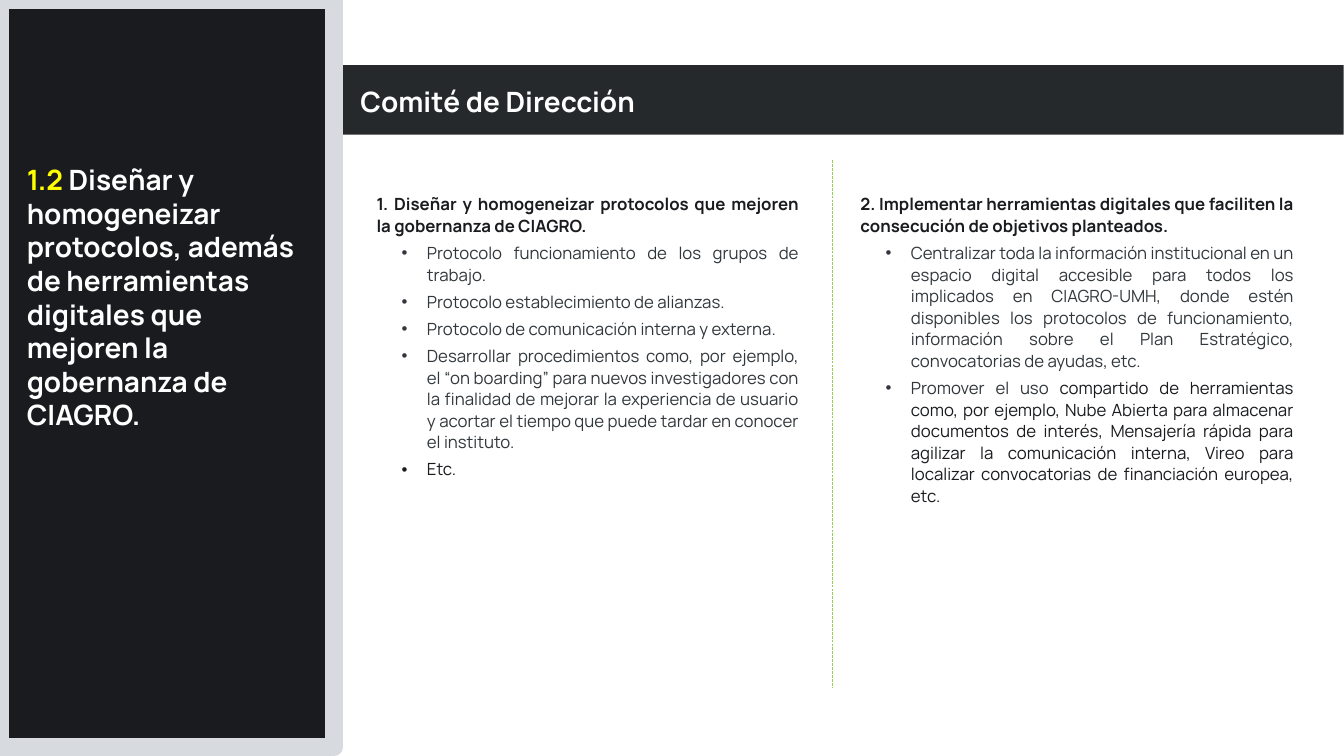
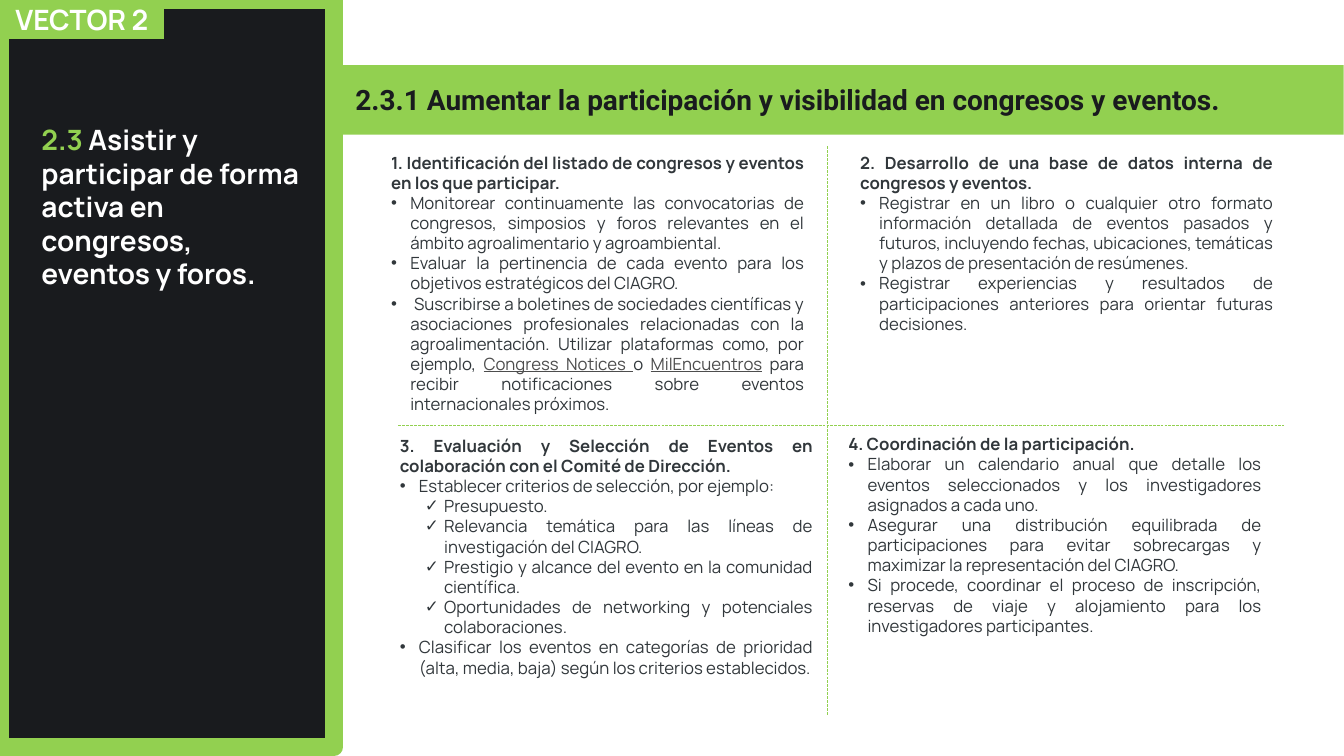
from lxml.etree import SubElement as Sub
from pptx import Presentation
from pptx.dml.color import RGBColor
from pptx.enum.dml import MSO_LINE_DASH_STYLE as Dash
from pptx.enum.shapes import MSO_CONNECTOR as Conn, MSO_SHAPE as Shape
from pptx.enum.text import MSO_ANCHOR as Anchor, MSO_AUTO_SIZE as Auto, PP_ALIGN as Align
from pptx.oxml.ns import qn
from pptx.util import Inches, Pt

WIDE, HIGH = 26.66, 15
INK, BAND, GREY, TEXT = "191B1E", "25292C", "D7DADF", "31373B"
GREEN, YELLOW, WHITE, LINK = "92D050", "FFFF00", "FFFFFF", "4D4D4D"
SIDE = 24.91  # right edge of the side panel, in columns

BIG = dict(name="Manrope", size=Pt(40), bold=True)
HEAD = dict(name="Manrope", size=Pt(24), bold=True)
BODY = {**HEAD, "bold": False}

# List styles: per depth, the level, left margin, hang (inches) and bullet
LOOSE = dict(
    gaps=dict(line_spacing=1.07, space_before=Pt(0), space_after=Pt(8)),
    head=INK,
    steps=[(0, 0, 0, None), (1, 1, 0.5, "•")],
)
TIGHT = dict(
    gaps=dict(line_spacing=1.0, space_before=Pt(0), space_after=Pt(0)),
    head=TEXT,
    steps=[(0, 0, 0, None), (0, 0.38, 0.38, "•"), (1, 0.88, 0.38, "✓")],
)


def tint(code):
    return RGBColor.from_string(code)


def put(obj, vals):
    for key, val in vals.items():
        setattr(obj, key, val)


class Deck:
    """Style and current slide; places are on a grid of 100 columns by 100 rows."""

    def __init__(self):
        self.prs = Presentation()
        put(self.prs, dict(slide_width=Inches(WIDE), slide_height=Inches(HIGH)))
        self.slide = None

    def grid(self, x, y):
        return Inches(x * WIDE / 100), Inches(y * HIGH / 100)

    def box(self, x, y, w, h):
        return *self.grid(x, y), *self.grid(w, h)

    def new(self, kind):
        self.slide = self.prs.slides.add_slide(self.prs.slide_layouts[kind])
        self.rect((0, 0, SIDE, 100), INK)

    def rect(self, area, fill=None, edge=None):
        item = self.slide.shapes.add_shape(Shape.RECTANGLE, *self.box(*area))
        item.shadow.inherit = False
        if fill:
            item.fill.solid()
            item.fill.fore_color.rgb = tint(fill)
        else:
            item.fill.background()
        if edge:
            item.line.color.rgb = tint(edge)
            item.line.width = Pt(25.25)
        else:
            item.line.fill.background()
        return item

    def frame(self, edge):
        self.rect((0.04, 0, 24.83, 98.8), edge=edge)

    def line(self, start, end):
        item = self.slide.shapes.add_connector(
            Conn.STRAIGHT, *self.grid(*start), *self.grid(*end))
        item.line.color.rgb = tint(GREEN)
        put(item.line, dict(width=Pt(0.5), dash_style=Dash.LONG_DASH))
        Sub(item._element.spPr, qn("a:effectLst"))

    def run(self, par, text, color, form, under=False):
        run = par.add_run()
        run.text = text
        put(run.font, {**form, "underline": under})
        run.font.color.rgb = tint(color)

    def place(self, idx, area):
        """Move a placeholder to its area, in front of what is drawn so far."""
        item = next(p for p in self.slide.placeholders
                    if p.placeholder_format.idx == idx)
        put(item, dict(zip(("left", "top", "width", "height"), self.box(*area))))
        item._element.getparent().append(item._element)
        return item.text_frame

    def title(self, text, area, band, color, font="Manrope"):
        self.rect((SIDE, 8.6, 75.06, 9.2), band)
        frame = self.place(0, area)
        put(frame, dict(word_wrap=True, auto_size=Auto.NONE,
                        vertical_anchor=Anchor.MIDDLE))
        par = frame.paragraphs[0]
        par.alignment = Align.LEFT
        self.run(par, text, color, {**BIG, "name": font})

    def aim(self, num, text, color, area):
        frame = self.slide.shapes.add_textbox(*self.box(*area)).text_frame
        put(frame, dict(word_wrap=True, margin_left=Inches(0.24),
                        margin_right=Inches(0.24)))
        par = frame.paragraphs[0]
        self.run(par, num, color, BIG)
        self.run(par, text, WHITE, BIG)

    def tag(self, text, area):
        frame = self.rect(area, GREEN).text_frame
        frame.vertical_anchor = Anchor.MIDDLE
        par = frame.paragraphs[0]
        par.alignment = Align.CENTER
        self.run(par, text, WHITE, BIG)

    def list(self, idx, area, style, rows):
        frame = self.place(idx, area)
        put(frame, dict(word_wrap=True, auto_size=Auto.NONE,
                        vertical_anchor=Anchor.TOP))
        for i, (depth, *runs) in enumerate(rows):
            par = frame.paragraphs[0] if i == 0 else frame.add_paragraph()
            level, left, hang, mark = style["steps"][depth]
            put(par, dict(style["gaps"], alignment=Align.JUSTIFY, level=level))
            prop = par._p.get_or_add_pPr()
            prop.set("marL", str(Inches(left)))
            prop.set("indent", str(-Inches(hang)))
            if mark:
                Sub(prop, qn("a:buFont"), typeface="Arial")
                Sub(prop, qn("a:buChar"), char=mark)
            else:
                Sub(prop, qn("a:buNone"))
            base, form = (TEXT, BODY) if depth else (style["head"], HEAD)
            for run in runs:
                text, color = run if isinstance(run, tuple) else (run, base)
                self.run(par, text, color, form, color == LINK)


def board(deck):
    deck.new(3)
    deck.title("Comité de Dirección", (26.44, 10.87, 70.03, 5.13), BAND, WHITE)
    deck.frame(GREY)
    deck.aim("1.2 ", "Diseñar y homogeneizar protocolos, además de herramientas "
             "digitales que mejoren la gobernanza de CIAGRO.",
             YELLOW, (1.09, 21.2, 22.77, 36.6))
    deck.list(1, (27.64, 25.13, 32.15, 38.8), LOOSE, [
        (0, "1. Diseñar y homogeneizar protocolos que mejoren la gobernanza "
            "de CIAGRO."),
        (1, "Protocolo funcionamiento de los grupos de trabajo."),
        (1, "Protocolo establecimiento de alianzas."),
        (1, "Protocolo de comunicación interna y externa."),
        (1, "Desarrollar procedimientos como, por ejemplo, el “on boarding” para "
            "nuevos investigadores con la finalidad de mejorar la experiencia de "
            "usuario y acortar el tiempo que puede tardar en conocer el instituto."),
        (1, ("Etc.", INK)),
    ])
    deck.list(2, (63.65, 25.13, 32.97, 39.4), LOOSE, [
        (0, "2. Implementar herramientas digitales que faciliten la consecución "
            "de objetivos planteados."),
        (1, "Centralizar toda la información institucional en un espacio digital "
            "accesible para todos los implicados en CIAGRO-UMH, donde estén "
            "disponibles los protocolos de funcionamiento, información sobre el "
            "Plan Estratégico, convocatorias de ayudas, etc."),
        (1, "Promover el uso ",
            ("compartido de herramientas como, por ejemplo, Nube Abierta para "
             "almacenar documentos de interés, Mensajería rápida para agilizar la "
             "comunicación interna, Vireo para localizar convocatorias de "
             "financiación europea, etc.", INK)),
    ])
    deck.line((61.93, 21.2), (61.93, 90.93))


def events(deck):
    deck.new(4)
    deck.title("2.3.1 Aumentar la participación y visibilidad en congresos y "
               "eventos.", (26.07, 10.6, 73.9, 5.13), GREEN, INK, "Roboto")
    deck.aim("2.3 ", "Asistir y participar de forma activa en congresos, eventos "
             "y foros.", GREEN, (2.18, 15.87, 21.42, 23.13))
    deck.tag("VECTOR 2", (0, 0, 12.19, 5.13))
    deck.frame(GREEN)

    # Lines between the four quarters
    deck.line((61.52, 19.33), (61.52, 94.6))
    deck.line((29.63, 56.2), (95.5, 56.2))

    # Quarters: left, top and height, then the rows
    quarters = [
        (28.73, 19.8, 35.67, [
            (0, "1. Identificación del listado de congresos y eventos en los que "
                "participar."),
            (1, "Monitorear continuamente las convocatorias de congresos, simposios "
                "y foros relevantes en el ámbito agroalimentario y agroambiental."),
            (1, "Evaluar la pertinencia de cada evento para los objetivos "
                "estratégicos del CIAGRO."),
            (1, " Suscribirse a boletines de sociedades científicas y asociaciones "
                "profesionales relacionadas con la agroalimentación. Utilizar "
                "plataformas como, por ejemplo, ",
                ("Congress Notices ", LINK), "o ", ("MilEncuentros", LINK),
                " para recibir notificaciones sobre eventos internacionales "
                "próximos."),
        ]),
        (63.62, 19.8, 24.93, [
            (0, "2. Desarrollo de una base de datos interna de congresos y eventos."),
            (1, "Registrar en un libro o cualquier otro formato información "
                "detallada de eventos pasados y futuros, incluyendo fechas, "
                "ubicaciones, temáticas y plazos de presentación de resúmenes."),
            (1, "Registrar experiencias y resultados de participaciones anteriores "
                "para orientar futuras decisiones."),
        ]),
        (29.37, 57.27, 33, [
            (0, "3. Evaluación y Selección de Eventos en colaboración con el Comité "
                "de Dirección."),
            (1, "Establecer criterios de selección, por ejemplo:"),
            (2, "Presupuesto."),
            (2, "Relevancia temática para las líneas de investigación del CIAGRO."),
            (2, "Prestigio y alcance del evento en la comunidad científica."),
            (2, "Oportunidades de networking y potenciales colaboraciones."),
            (1, "Clasificar los eventos en categorías de prioridad (alta, media, "
                "baja) según los criterios establecidos."),
        ]),
        (62.75, 57.07, 27.6, [
            (0, "4. Coordinación de la participación."),
            (1, "Elaborar un calendario anual que detalle los eventos seleccionados "
                "y los investigadores asignados a cada uno."),
            (1, "Asegurar una distribución equilibrada de participaciones para "
                "evitar sobrecargas y maximizar la representación del CIAGRO."),
            (1, "Si procede, coordinar el proceso de inscripción, reservas de viaje "
                "y alojamiento para los investigadores participantes."),
        ]),
    ]
    for idx, (x, y, high, rows) in enumerate(quarters, 1):
        deck.list(idx, (x, y, 31.47, high), TIGHT, rows)


def main():
    deck = Deck()
    board(deck)
    events(deck)
    deck.prs.save("out.pptx")


if __name__ == "__main__":
    main()
